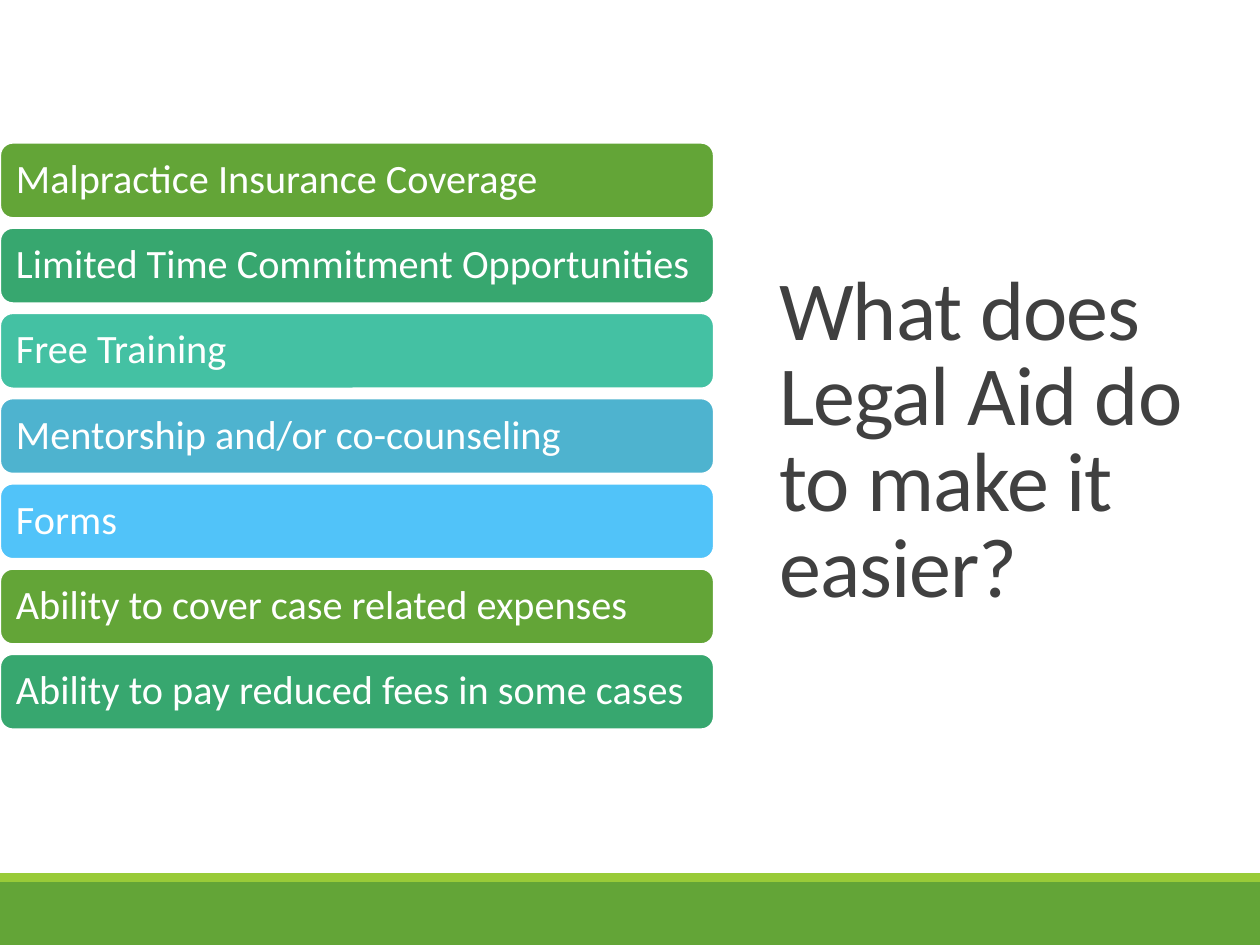
from dataclasses import dataclass

from pptx import Presentation
from pptx.dml.color import RGBColor
from pptx.enum.shapes import MSO_SHAPE
from pptx.enum.text import MSO_ANCHOR, PP_ALIGN
from pptx.shapes.autoshape import Shape
from pptx.slide import Slide
from pptx.util import Pt

GREEN = RGBColor(0x63, 0xA5, 0x37)
LIME = RGBColor(0x99, 0xCB, 0x38)
EMERALD = RGBColor(0x37, 0xA7, 0x6F)
TEAL = RGBColor(0x44, 0xC1, 0xA3)
STEEL_BLUE = RGBColor(0x4E, 0xB3, 0xCF)
SKY_BLUE = RGBColor(0x51, 0xC3, 0xF9)
WHITE = RGBColor(0xFF, 0xFF, 0xFF)
DARK_GRAY = RGBColor(0x40, 0x40, 0x40)

FONT = "Calibri"
PAGE_WIDTH, PAGE_HEIGHT = 720, 540
BENEFIT_TOP, BENEFIT_PITCH = 81.5, 48.7
BENEFIT_WIDTH, BENEFIT_HEIGHT = 408, 43.2


@dataclass
class Band:
    top: float
    height: float
    color: RGBColor


@dataclass
class Benefit:
    text: str
    color: RGBColor


BANDS = [Band(504, 36, GREEN), Band(499, 5, LIME)]

BENEFITS = [
    Benefit("Malpractice Insurance Coverage", GREEN),
    Benefit("Limited Time Commitment Opportunities", EMERALD),
    Benefit("Free Training", TEAL),
    Benefit("Mentorship and/or co-counseling", STEEL_BLUE),
    Benefit("Forms", SKY_BLUE),
    Benefit("Ability to cover case related expenses", GREEN),
    Benefit("Ability to pay reduced fees in some cases", EMERALD),
]


def add_filled_shape(page: Slide, kind: MSO_SHAPE, top: float, width: float,
                     height: float, color: RGBColor) -> Shape:
    """Add a flat shape that starts at the left edge of the page."""
    box = page.shapes.add_shape(kind, Pt(0), Pt(top), Pt(width), Pt(height))
    box.shadow.inherit = False
    box.fill.solid()
    box.fill.fore_color.rgb = color
    box.line.fill.background()
    return box


def format_text(box: Shape, size: float, color: RGBColor, line_spacing: float) -> None:
    box.text_frame.word_wrap = True
    box.text_frame.vertical_anchor = MSO_ANCHOR.MIDDLE
    for para in box.text_frame.paragraphs:
        para.alignment = PP_ALIGN.LEFT
        para.line_spacing = line_spacing
        for span in para.runs:
            span.font.name = FONT
            span.font.size = Pt(size)
            span.font.color.rgb = color


def add_benefit(page: Slide, benefit: Benefit, top: float) -> None:
    box = add_filled_shape(page, MSO_SHAPE.ROUNDED_RECTANGLE, top,
                           BENEFIT_WIDTH, BENEFIT_HEIGHT, benefit.color)
    box.adjustments[0] = 0.17
    box.line.color.rgb = WHITE
    box.line.width = Pt(1.25)
    frame = box.text_frame
    frame.text = benefit.text
    frame.margin_left = frame.margin_right = Pt(7)
    format_text(box, 23, WHITE, 0.9)


def fill_title(page: Slide) -> None:
    title = page.shapes.title
    title.left, title.top = Pt(438), Pt(30)
    title.width, title.height = Pt(282), Pt(398)
    title.text_frame.text = "What does Legal Aid do\vto make it easier?"
    title.text_frame.margin_top = Pt(52)
    format_text(title, 48, DARK_GRAY, 0.85)
    for span in title.text_frame.paragraphs[0].runs:
        span.font._element.set("spc", "-50")


def main() -> None:
    deck = Presentation()
    deck.slide_width, deck.slide_height = Pt(PAGE_WIDTH), Pt(PAGE_HEIGHT)
    page = deck.slides.add_slide(deck.slide_layouts.get_by_name("Title Only"))
    for band in BANDS:
        add_filled_shape(page, MSO_SHAPE.RECTANGLE, band.top, PAGE_WIDTH,
                         band.height, band.color)
    fill_title(page)
    for row, benefit in enumerate(BENEFITS):
        add_benefit(page, benefit, BENEFIT_TOP + row * BENEFIT_PITCH)
    deck.save("out.pptx")


if __name__ == "__main__":
    main()
